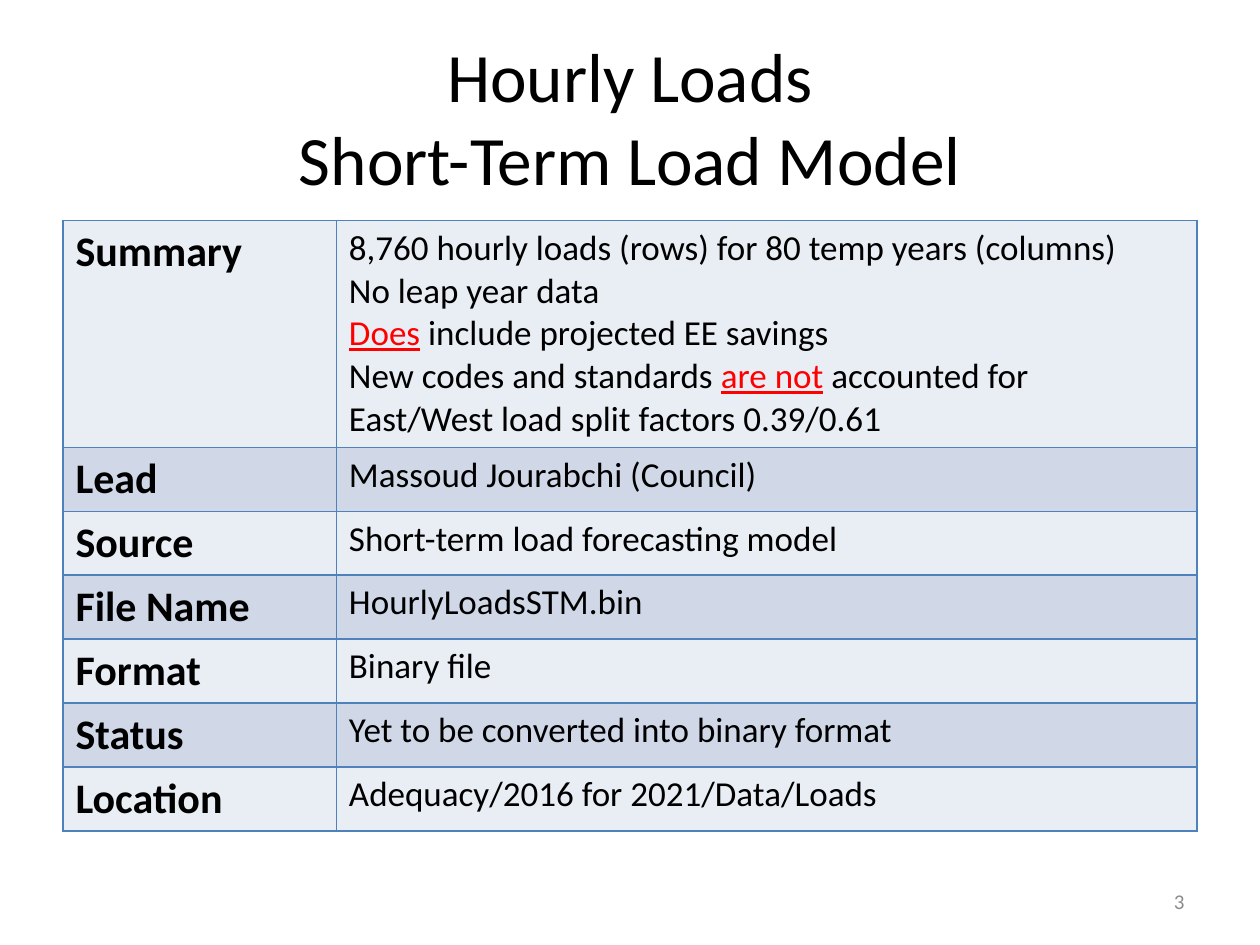
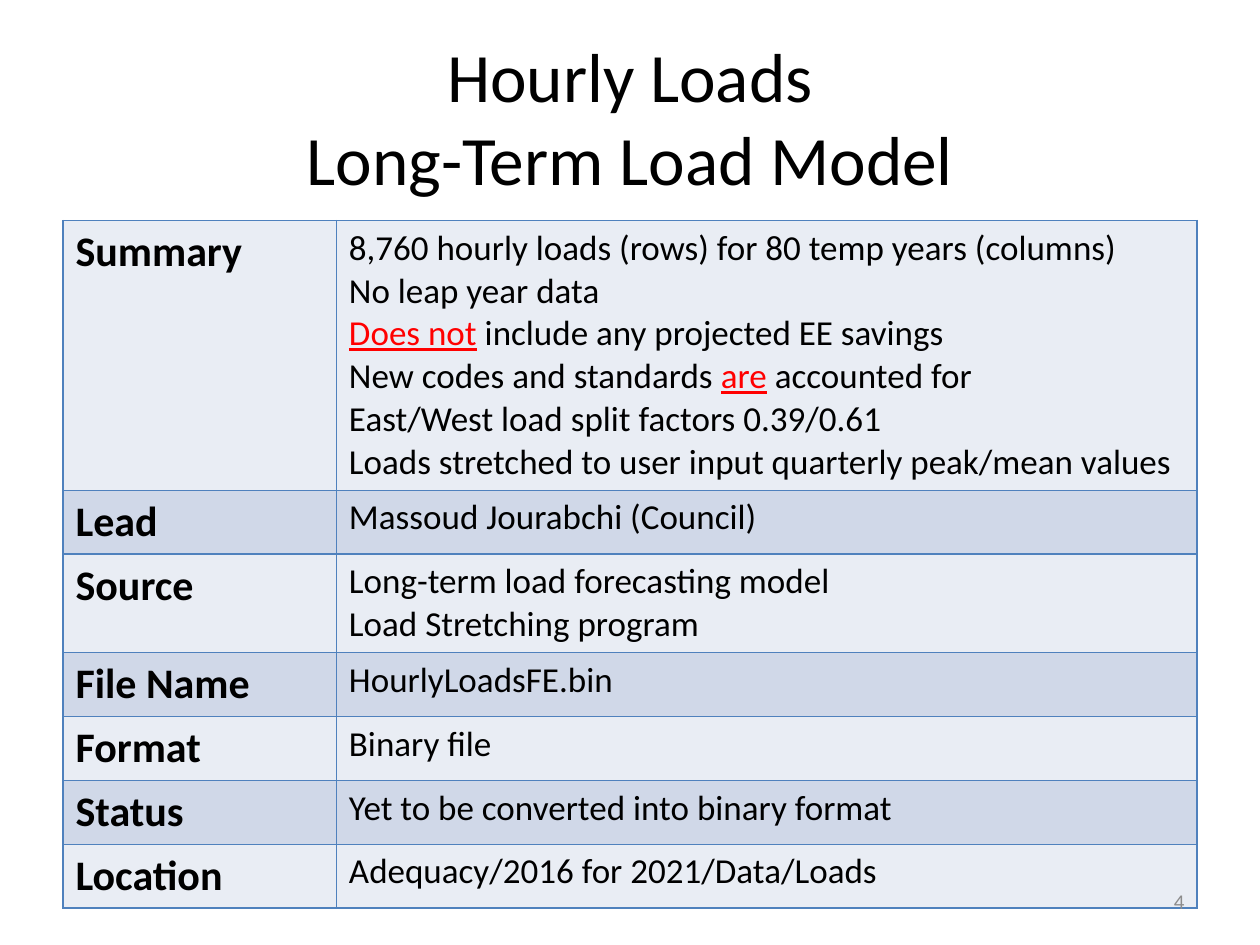
"""Build two slides that describe the hourly load files of the load models."""
from lxml import etree
from pptx import Presentation
from pptx.dml.color import RGBColor
from pptx.enum.text import MSO_ANCHOR, MSO_AUTO_SIZE, PP_ALIGN
from pptx.oxml.ns import qn
from pptx.util import Inches, Pt

MIDDLE = MSO_ANCHOR.MIDDLE
NO_AUTOFIT = MSO_AUTO_SIZE.NONE
CENTER, RIGHT = PP_ALIGN.CENTER, PP_ALIGN.RIGHT

FONT = "Calibri"
BLACK, RED, GRAY, BLUE = "000000", "FF0000", "8C8C8C", "4F81BD"
BANDS = ("E9EDF4", "D0D8E8")
TITLE_SIZE, LABEL_SIZE, DETAIL_SIZE, NUMBER_SIZE = 39.6, 24, 20, 12

TITLE_BOX = (0.5, 0.3, 9, 1.25)
NUMBER_BOX = (7.17, 6.95, 2.33, 0.4)
TABLE_LEFT, TABLE_TOP = 0.5, 1.75
COLUMN_WIDTHS = (2.17, 6.83)
ROW_HEIGHT = 0.41

EMPHASIS = "*"
FIRST_NUMBER = 3
LABELS = ("Summary", "Lead", "Source", "File Name", "Format", "Status", "Location")
HOURS = "8,760 hourly loads (rows) for 80 temp years (columns)"
LEAP = "No leap year data"
SPLIT = "East/West load split factors 0.39/0.61"
LEAD = ["Massoud Jourabchi (Council)"]
SHARED_END = [
    ["Binary file"],
    ["Yet to be converted into binary format"],
    ["Adequacy/2016 for 2021/Data/Loads"],
]
MODELS = [
    {
        "title": ("Hourly Loads", "Short-Term Load Model"),
        "details": [
            [HOURS, LEAP,
             "*Does* include projected EE savings",
             "New codes and standards *are not* accounted for",
             SPLIT],
            LEAD,
            ["Short-term load forecasting model"],
            ["HourlyLoadsSTM.bin"],
            *SHARED_END,
        ],
    },
    {
        "title": ("Hourly Loads", "Long-Term Load Model"),
        "details": [
            [HOURS, LEAP,
             "*Does not* include any projected EE savings",
             "New codes and standards *are* accounted for",
             SPLIT,
             "Loads stretched to user input quarterly peak/mean values"],
            LEAD,
            ["Long-term load forecasting model", "Load Stretching program"],
            ["HourlyLoadsFE.bin"],
            *SHARED_END,
        ],
    },
]


def color(hex_code):
    return RGBColor.from_string(hex_code)


def inches(lengths):
    return [Inches(length) for length in lengths]


def add_run(paragraph, text, size, hex_code=BLACK, bold=False, underline=False):
    run = paragraph.add_run()
    run.text = text
    font = run.font
    font.name, font.size = FONT, Pt(size)
    font.bold, font.underline = bold, underline
    font.color.rgb = color(hex_code)


def add_title(slide, lines):
    title = slide.shapes.title
    title.left, title.top, title.width, title.height = inches(TITLE_BOX)
    frame = title.text_frame
    frame.auto_size, frame.vertical_anchor = NO_AUTOFIT, MIDDLE
    paragraph = frame.paragraphs[0]
    paragraph.alignment = CENTER
    for position, line in enumerate(lines):
        if position:
            paragraph.add_line_break()
        add_run(paragraph, line, TITLE_SIZE)
    for line_break in paragraph._p.findall(qn("a:br")):
        etree.SubElement(line_break, qn("a:rPr"), sz=str(round(TITLE_SIZE * 100)))


def add_borders(cell):
    properties = cell._tc.get_or_add_tcPr()
    for side in ("lnL", "lnR", "lnT", "lnB"):
        border = etree.SubElement(properties, qn(f"a:{side}"), w=str(Pt(1)))
        fill = etree.SubElement(border, qn("a:solidFill"))
        etree.SubElement(fill, qn("a:srgbClr"), val=BLUE)


def fill_cell(cell, lines, band, size, bold):
    add_borders(cell)
    cell.fill.solid()
    cell.fill.fore_color.rgb = color(band)
    frame = cell.text_frame
    for position, line in enumerate(lines):
        paragraph = frame.add_paragraph() if position else frame.paragraphs[0]
        for part, text in enumerate(line.split(EMPHASIS)):
            stressed = part % 2 == 1
            if text:
                add_run(paragraph, text, size, RED if stressed else BLACK, bold, stressed)


def add_detail_table(slide, details):
    table = slide.shapes.add_table(
        len(LABELS), len(COLUMN_WIDTHS), Inches(TABLE_LEFT), Inches(TABLE_TOP),
        Inches(sum(COLUMN_WIDTHS)), Inches(ROW_HEIGHT * len(LABELS))).table
    table.first_row = table.horz_banding = False
    for column, width in zip(table.columns, COLUMN_WIDTHS):
        column.width = Inches(width)
    for index, (label, lines) in enumerate(zip(LABELS, details)):
        table.rows[index].height = Inches(ROW_HEIGHT)
        band = BANDS[index % 2]
        fill_cell(table.cell(index, 0), [label], band, LABEL_SIZE, True)
        fill_cell(table.cell(index, 1), lines, band, DETAIL_SIZE, False)


def add_slide_number(slide, number):
    frame = slide.shapes.add_textbox(*inches(NUMBER_BOX)).text_frame
    frame.word_wrap, frame.vertical_anchor = True, MIDDLE
    paragraph = frame.paragraphs[0]
    paragraph.alignment = RIGHT
    add_run(paragraph, str(number), NUMBER_SIZE, GRAY)


def main():
    prs = Presentation()
    prs.slide_width, prs.slide_height = Inches(10), Inches(7.5)
    title_only = prs.slide_layouts[5]
    for number, model in enumerate(MODELS, FIRST_NUMBER):
        slide = prs.slides.add_slide(title_only)
        add_title(slide, model["title"])
        add_detail_table(slide, model["details"])
        add_slide_number(slide, number)
    prs.save("out.pptx")


if __name__ == "__main__":
    main()
